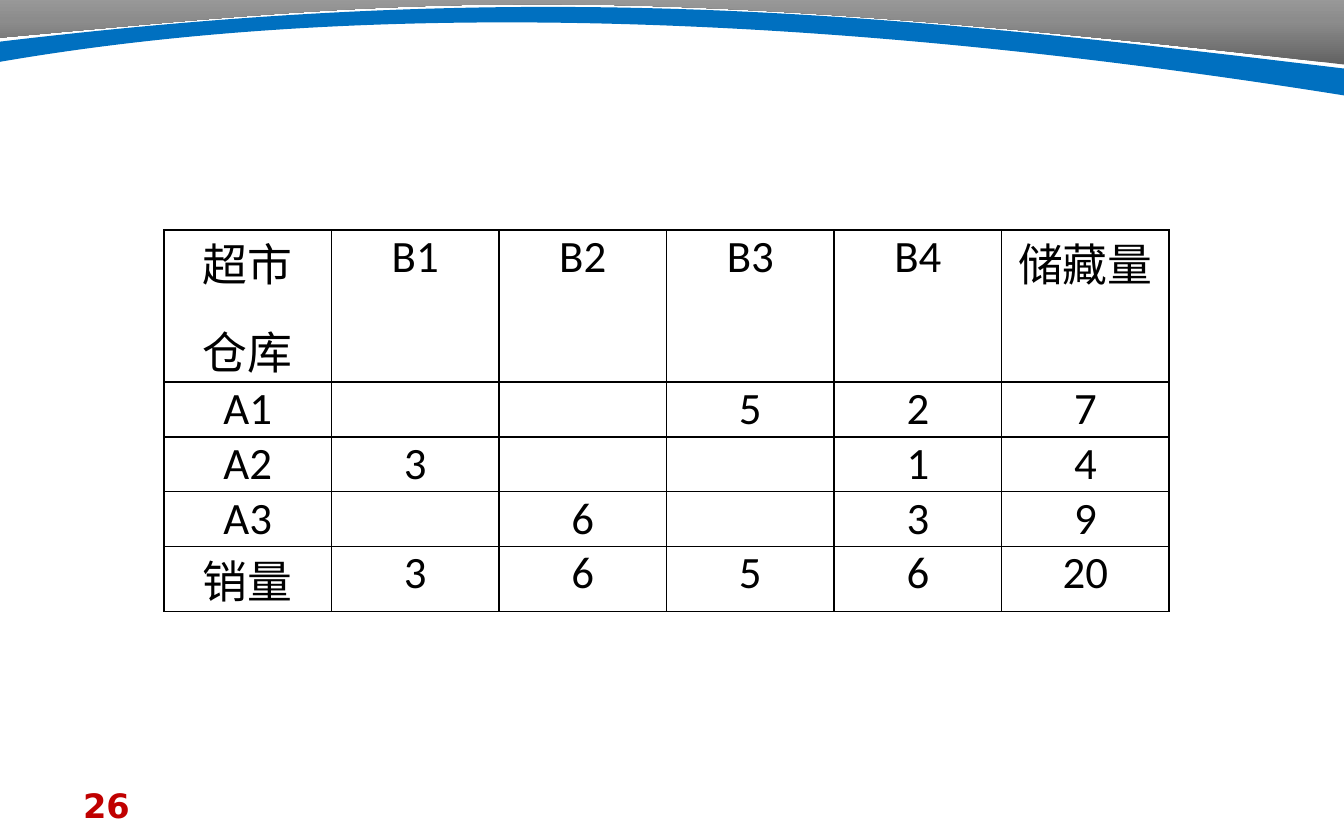
import copy

import pptx
import pptx.util
import pptx.dml.color
import pptx.enum.text
import pptx.oxml
import pptx.oxml.ns

WIDTH, HEIGHT = 10, 6.25
ROWS = [
    ["超市\n仓库", "B1", "B2", "B3", "B4", "储藏量"],
    ["A1", "", "", "5", "2", "7"],
    ["A2", "3", "", "", "1", "4"],
    ["A3", "", "6", "", "3", "9"],
    ["销量", "3", "6", "5", "6", "20"],
]
ROW_HEIGHTS = [1.13, 0.4, 0.4, 0.4, 0.48]
TABLE_LEFT, TABLE_TOP, TABLE_WIDTH = 1.22, 1.71, 7.48
PAGE_NUMBER = "26"

GREY_OUTLINE = [(10, 0.48), (4.43, -0.17), (3.08, 0), (0, 0.28), (0, -0.02), (10, -0.02)]
GREY_CURVES = [0]
BLUE_OUTLINE = [
    (0, 0.31), (4.03, -0.17), (6.52, 0.09), (10, 0.51),
    (10, 0.71), (6.05, 0.08), (2.67, 0), (0, 0.46),
]
BLUE_CURVES = [0, 4]
GREY_STOPS = ["626262", "8C8C8C", "A6A6A6"]
BLUE = "0070C0"
BLACK = "000000"
RED = "C00000"


def inches(value):
    return pptx.util.Inches(value)


def color(value):
    return pptx.dml.color.RGBColor.from_string(value)


def add_band(page, outline, curves):
    points = [(round(100 * x), round(100 * y)) for x, y in outline]
    builder = page.shapes.build_freeform(*points[0], scale=inches(0.01))
    builder.add_line_segments(points[1:], close=True)
    band = builder.convert_to_shape()
    band.shadow.inherit = False
    band.line.fill.background()
    lines = list(band._element.iter(pptx.oxml.ns.qn("a:lnTo")))
    for start in curves:
        bend, *others = lines[start:start + 3]
        bend.tag = pptx.oxml.ns.qn("a:cubicBezTo")
        for line in others:
            bend.append(line[0])
            line.getparent().remove(line)
    return band


def fill_gradient(band, shades, angle=90):
    band.fill.gradient()
    band.fill.gradient_angle = angle
    stops = next(band._element.iter(pptx.oxml.ns.qn("a:gsLst")))
    stops.insert(1, copy.deepcopy(stops[0]))
    for index, (stop, shade) in enumerate(zip(band.fill.gradient_stops, shades)):
        stop.position = index / (len(shades) - 1)
        stop.color.rgb = color(shade)


def write(frame, text, size=24, font="Calibri", ink=BLACK, bold=False,
          align=pptx.enum.text.PP_ALIGN.CENTER, gap=12):
    frame.word_wrap = True
    for index, line in enumerate(text.split("\n")):
        para = frame.add_paragraph() if index else frame.paragraphs[0]
        para.alignment = align
        if index:
            para.space_before = pptx.util.Pt(gap)
        span = para.add_run()
        span.text = line
        span.font.size = pptx.util.Pt(size)
        span.font.name = font
        span.font.bold = bold
        span.font.color.rgb = color(ink)


def add_borders(cell, ink=BLACK, points=1):
    for side in ("lnL", "lnR", "lnT", "lnB"):
        cell._tc.get_or_add_tcPr().append(pptx.oxml.parse_xml(
            f'<a:{side} {pptx.oxml.ns.nsdecls("a")} w="{pptx.util.Pt(points)}">'
            f'<a:solidFill><a:srgbClr val="{ink}"/></a:solidFill></a:{side}>'
        ))


def add_grid(page):
    grid = page.shapes.add_table(
        len(ROWS), len(ROWS[0]), inches(TABLE_LEFT), inches(TABLE_TOP),
        inches(TABLE_WIDTH), inches(sum(ROW_HEIGHTS)),
    ).table
    grid.first_row = False
    grid.horz_banding = False
    for row, height, texts in zip(grid.rows, ROW_HEIGHTS, ROWS):
        row.height = inches(height)
        for cell, text in zip(row.cells, texts):
            cell.margin_left = cell.margin_right = inches(0.07)
            cell.margin_top = cell.margin_bottom = 0
            add_borders(cell)
            cell.fill.background()
            if text:
                write(cell.text_frame, text)


def main():
    deck = pptx.Presentation()
    deck.slide_width, deck.slide_height = inches(WIDTH), inches(HEIGHT)
    page = deck.slides.add_slide(deck.slide_layouts[6])

    grey = add_band(page, GREY_OUTLINE, GREY_CURVES)
    fill_gradient(grey, GREY_STOPS)

    blue = add_band(page, BLUE_OUTLINE, BLUE_CURVES)
    blue.fill.solid()
    blue.fill.fore_color.rgb = color(BLUE)

    add_grid(page)

    box = page.shapes.add_textbox(inches(0.52), inches(5.79), inches(2.33), inches(0.33))
    write(box.text_frame, PAGE_NUMBER, size=18, font="DejaVu Sans", ink=RED,
          bold=True, align=pptx.enum.text.PP_ALIGN.LEFT)

    deck.save("out.pptx")


if __name__ == "__main__":
    main()
